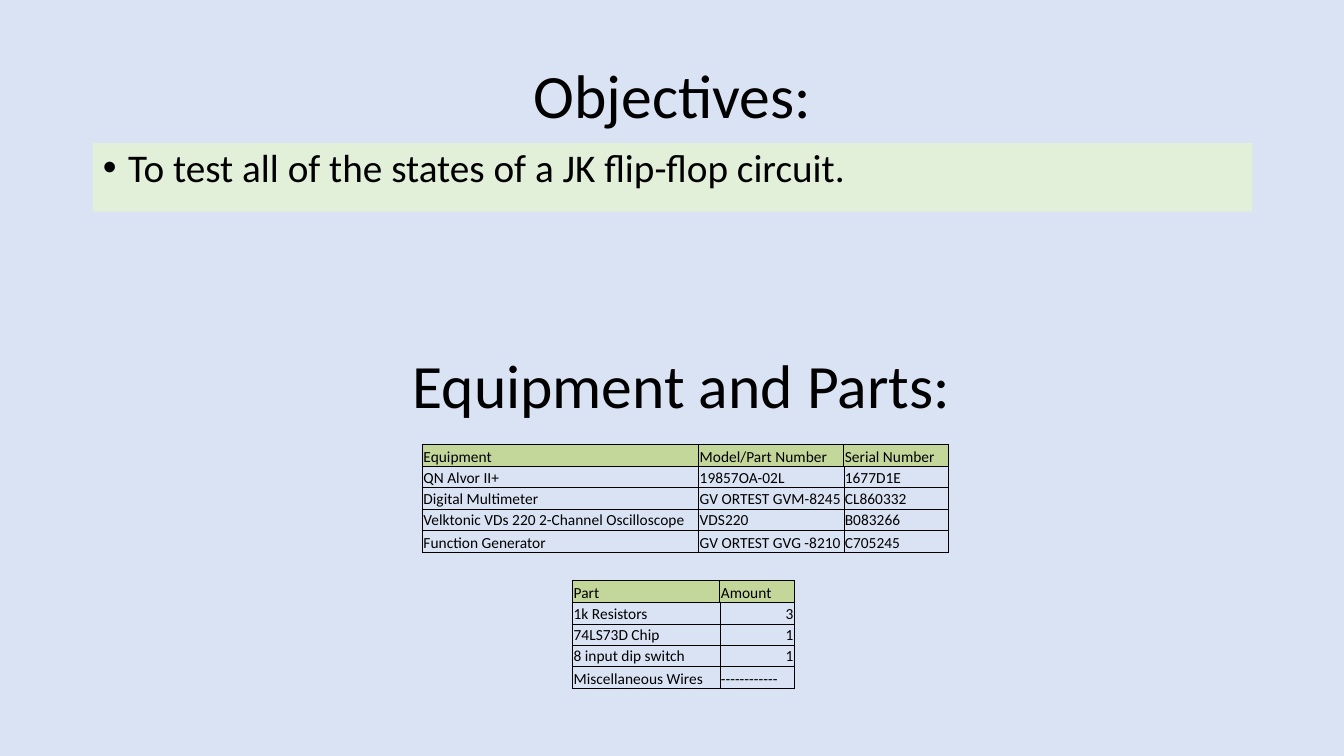
from lxml import etree
from pptx import Presentation
from pptx.dml.color import RGBColor
from pptx.enum.text import MSO_ANCHOR, MSO_AUTO_SIZE, PP_ALIGN
from pptx.oxml.ns import qn
from pptx.util import Inches, Pt

LEFT, MID, RIGHT = PP_ALIGN.LEFT, PP_ALIGN.CENTER, PP_ALIGN.RIGHT
TOP, CENTER, BOTTOM = MSO_ANCHOR.TOP, MSO_ANCHOR.MIDDLE, MSO_ANCHOR.BOTTOM
FIXED = MSO_AUTO_SIZE.NONE
BLACK, SKY, MINT, GREEN = "000000", "DAE3F3", "E2F0D9", "C4D79B"
HEIGHTS = [0.22, 0.21, 0.21, 0.21, 0.22]
HEAD = {"alignment": MID, "line_spacing": 0.9, "space_before": Pt(0)}
LIST = {"alignment": LEFT, "line_spacing": 0.9, "space_before": Pt(10)}
CELL = {"margin_left": Inches(0.01), "margin_right": Inches(0.01),
        "margin_top": Inches(0.01), "margin_bottom": Inches(0),
        "vertical_anchor": BOTTOM}
GEAR = [
    ["Equipment", "Model/Part Number", "Serial Number"],
    ["QN Alvor II+", "19857OA-02L", "1677D1E"],
    ["Digital Multimeter", "GV ORTEST GVM-8245", "CL860332"],
    ["Velktonic VDs 220 2-Channel Oscilloscope", "VDS220", "B083266"],
    ["Function Generator", "GV ORTEST GVG -8210", "C705245"],
]
PARTS = [
    ["Part", "Amount"],
    ["1k Resistors", "3"],
    ["74LS73D Chip", "1"],
    ["8 input dip switch", "1"],
    ["Miscellaneous Wires", "------------"],
]


def style(item, values):
    for name, value in values.items():
        setattr(item, name, value)


def paint(fill, color):
    fill.solid()
    fill.fore_color.rgb = RGBColor.from_string(color)


def write(frame, text, size, values):
    para = frame.paragraphs[0]
    style(para, values)
    run = para.add_run()
    run.text = text
    style(run.font, {"name": "Calibri", "size": Pt(size), "bold": False})
    run.font.color.rgb = RGBColor.from_string(BLACK)
    return para


def place(shape, left, top, width, height):
    style(shape, {"left": Inches(left), "top": Inches(top),
                  "width": Inches(width), "height": Inches(height)})


def fit(frame, anchor):
    style(frame, {"word_wrap": True, "auto_size": FIXED,
                  "vertical_anchor": anchor})


def add_head(shape, text, left, top):
    place(shape, left, top, 11.5, 1.45)
    fit(shape.text_frame, CENTER)
    write(shape.text_frame, text, 44, HEAD)


def add_list(shape, text):
    place(shape, 0.92, 1.42, 11.5, 0.68)
    paint(shape.fill, MINT)
    fit(shape.text_frame, TOP)
    props = write(shape.text_frame, text, 28, LIST)._p.get_or_add_pPr()
    props.set("marL", str(Inches(0.25)))
    props.set("indent", str(Inches(-0.25)))
    etree.SubElement(props, qn("a:buFont")).set("typeface", "Arial")
    etree.SubElement(props, qn("a:buChar")).set("char", "•")


def add_edge(cell, side, width):
    line = etree.SubElement(cell._tc.get_or_add_tcPr(), qn("a:ln" + side))
    line.set("w", str(Pt(width)))
    fill = etree.SubElement(line, qn("a:solidFill"))
    etree.SubElement(fill, qn("a:srgbClr")).set("val", BLACK)


def add_grid(slide, rows, left, top, widths):
    frame = slide.shapes.add_table(
        len(rows), len(widths), Inches(left), Inches(top),
        Inches(sum(widths)), Inches(sum(HEIGHTS)))
    table = frame.table
    style(table, {"first_row": False, "horz_banding": False})
    for col, width in zip(table.columns, widths):
        col.width = Inches(width)
    for row, height in zip(table.rows, HEIGHTS):
        row.height = Inches(height)
    for r, row in enumerate(rows):
        for c, text in enumerate(row):
            cell = table.cell(r, c)
            style(cell, CELL)
            align = RIGHT if text.isdigit() else LEFT
            write(cell.text_frame, text, 11, {"alignment": align})
            thick = {"L": c == 0, "R": c == len(row) - 1,
                     "T": r == 1, "B": r == len(rows) - 1}
            for side, outer in thick.items():
                add_edge(cell, side, 1 if r == 0 or outer else 0.5)
            if r == 0:
                paint(cell.fill, GREEN)
            else:
                cell.fill.background()


def main():
    deck = Presentation()
    style(deck, {"slide_width": Inches(13.33), "slide_height": Inches(7.5)})
    slide = deck.slides.add_slide(deck.slide_layouts[1])
    paint(slide.background.fill, SKY)
    add_head(slide.shapes.title, "Objectives:", 0.92, 0.25)
    add_list(slide.placeholders[1],
             "To test all of the states of a JK flip-flop circuit.")
    box = slide.shapes.add_textbox(0, 0, 0, 0)
    add_head(box, "Equipment and Parts:", 1.01, 3.13)
    add_grid(slide, GEAR, 4.19, 4.41, [2.74, 1.44, 1.04])
    add_grid(slide, PARTS, 5.68, 5.76, [1.46, 0.74])
    deck.save("out.pptx")


if __name__ == "__main__":
    main()
